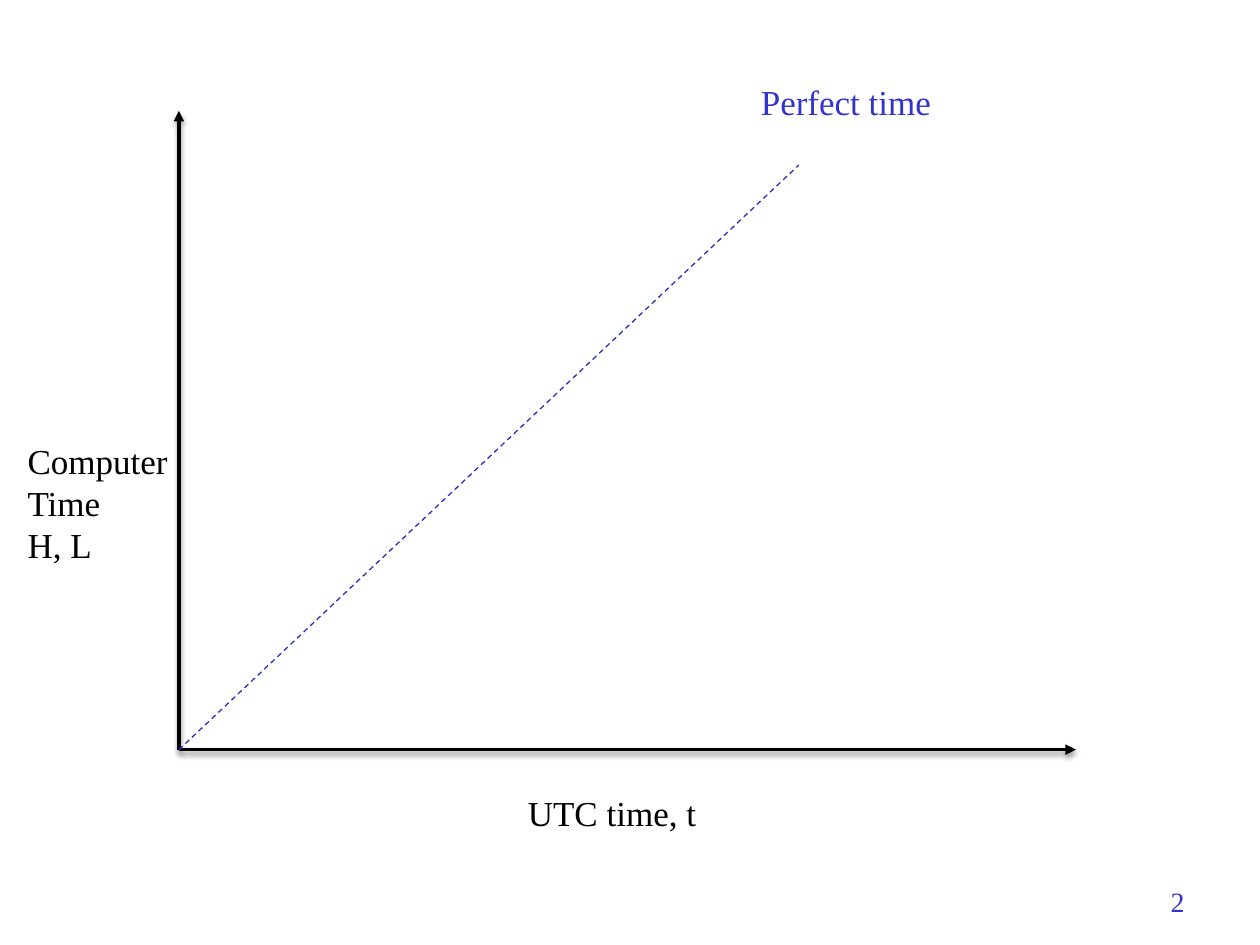
from lxml.etree import SubElement
from pptx import Presentation
from pptx.dml.color import RGBColor
from pptx.enum.dml import MSO_LINE
from pptx.enum.text import MSO_ANCHOR, MSO_AUTO_SIZE, PP_ALIGN
from pptx.enum.shapes import MSO_CONNECTOR
from pptx.oxml.ns import qn
from pptx.util import Inches, Pt

BLACK = RGBColor(0x00, 0x00, 0x00)
BLUE = RGBColor(0x33, 0x33, 0xCC)
DARK_BLUE = RGBColor(0x2D, 0x2D, 0xB9)
FONT = "Times New Roman"
ORIGIN = (1.42, 5.95)


def add_label(slide, box, lines, color=BLACK, size=20, align=PP_ALIGN.LEFT, **frame):
    tf = slide.shapes.add_textbox(*map(Inches, box)).text_frame
    settings = {"word_wrap": True, "auto_size": MSO_AUTO_SIZE.NONE, **frame}
    for name, value in settings.items():
        setattr(tf, name, value)
    for i, line in enumerate(lines):
        p = tf.paragraphs[0] if i == 0 else tf.add_paragraph()
        p.alignment = align
        r = p.add_run()
        r.text = line
        for name, value in {"name": FONT, "size": Pt(size)}.items():
            setattr(r.font, name, value)
        r.font.color.rgb = color


def add_line(slide, end, color, width):
    """Draw a line from the origin, without a shadow."""
    line = slide.shapes.add_connector(
        MSO_CONNECTOR.STRAIGHT, *map(Inches, ORIGIN + end))
    line.line.color.rgb = color
    line.line.width = Pt(width)
    effects = SubElement(line._element.spPr, qn("a:effectLst"))
    return line, effects


def add_axis(slide, end):
    """Draw an axis with an arrowhead and a soft shadow below it."""
    line, effects = add_line(slide, end, BLACK, 2)
    SubElement(line.line._get_or_add_ln(), qn("a:tailEnd"), type="triangle")
    shadow = SubElement(effects, qn("a:outerShdw"), blurRad=str(Pt(3.1)),
                        dist=str(Pt(1.6)), dir="5400000", rotWithShape="0")
    shade = SubElement(shadow, qn("a:srgbClr"), val=str(BLACK))
    SubElement(shade, qn("a:alpha"), val="38000")


def main():
    prs = Presentation()
    prs.slide_width, prs.slide_height = Inches(10), Inches(7.5)
    slide = prs.slides.add_slide(prs.slide_layouts[6])
    grow = {"auto_size": MSO_AUTO_SIZE.SHAPE_TO_FIT_TEXT}
    one_line = {**grow, "word_wrap": False}

    # Slide number
    add_label(slide, (7.17, 6.95, 2.33, 0.4), ["2"], BLUE, 16, PP_ALIGN.RIGHT,
              vertical_anchor=MSO_ANCHOR.MIDDLE)

    # Axes and their labels
    add_axis(slide, (8.54, ORIGIN[1]))
    add_axis(slide, (ORIGIN[0], 0.88))
    add_label(slide, (0.12, 3.44, 1.81, 1.11), ["Computer", "Time", "H, L"], **grow)
    add_label(slide, (4.09, 6.23, 1.55, 0.44), ["UTC time, t"], **one_line)

    # Perfect time
    perfect, _ = add_line(slide, (6.34, 1.31), DARK_BLUE, 0.75)
    perfect.line.dash_style = MSO_LINE.DASH
    add_label(slide, (5.94, 0.59, 1.56, 0.44), ["Perfect time"], BLUE, **one_line)

    prs.save("out.pptx")


if __name__ == "__main__":
    main()
